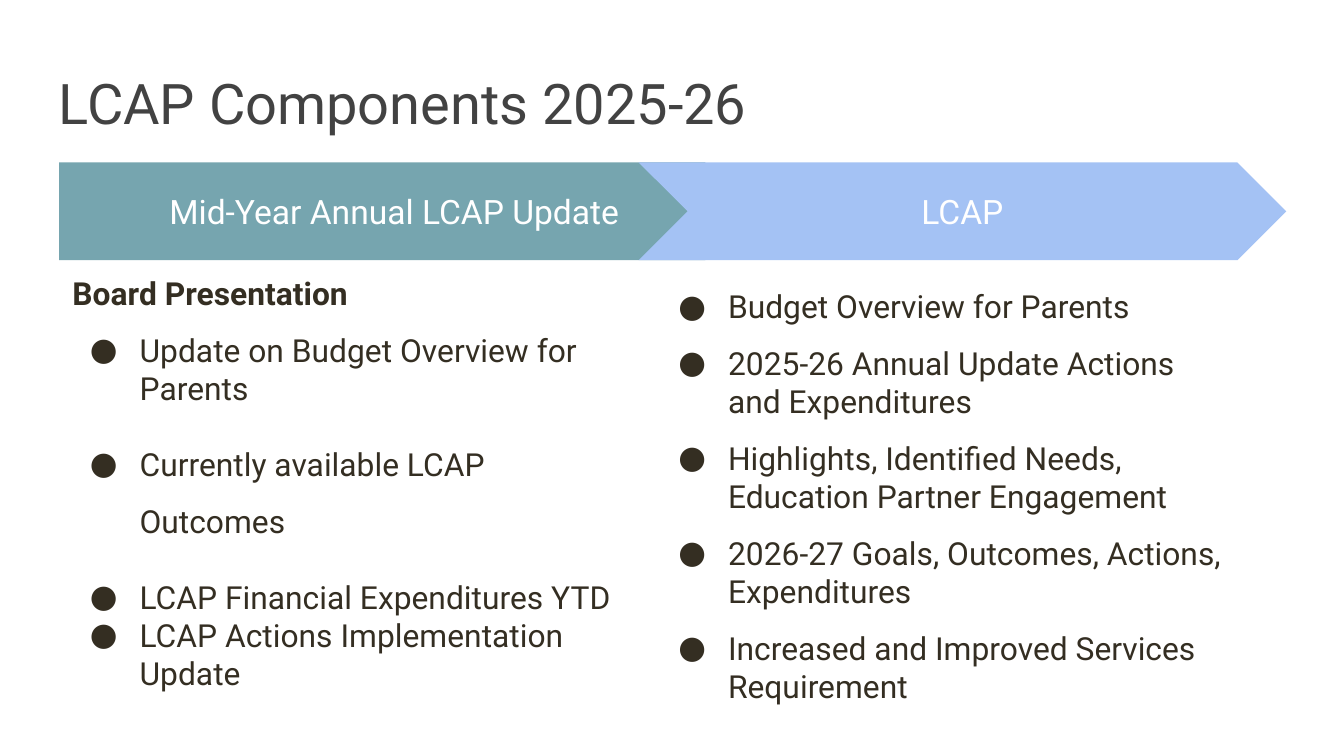
from lxml import etree
from pptx import Presentation
from pptx import util as u
from pptx.dml.color import RGBColor
from pptx.enum import shapes, text
from pptx.oxml import ns

FONT = "Roboto"
INK = "342E22"
WHITE = "FFFFFF"
BODY_SIZE = 17

UPDATE_ITEMS = [
    ("Update on Budget Overview for Parents", 1),
    ("Currently available LCAP Outcomes", 1.5),
    ("LCAP Financial Expenditures YTD", 1.5),
    ("LCAP Actions Implementation Update", None),
]
LCAP_ITEMS = [
    "Budget Overview for Parents",
    "2025-26 Annual Update Actions and Expenditures",
    "Highlights, Identified Needs, Education Partner Engagement",
    "2026-27 Goals, Outcomes, Actions, Expenditures",
    "Increased and Improved Services Requirement",
]


def color(hex_code):
    """Turn a hex string into a colour."""
    return RGBColor.from_string(hex_code)


def prepare_frame(frame, anchor):
    """Set wrapping, insets and vertical anchor of a text frame."""
    frame.word_wrap = True
    frame.vertical_anchor = anchor
    frame.margin_left = frame.margin_right = u.Cm(0.25)
    frame.margin_top = frame.margin_bottom = u.Cm(0.25)


def style(paragraph, size, hex_code, bold=False):
    """Give a paragraph its font."""
    font = paragraph.font
    font.name, font.size, font.bold = FONT, u.Pt(size), bold
    font.color.rgb = color(hex_code)


def add_text_area(slide, box, anchor=text.MSO_ANCHOR.TOP):
    """Add an empty text box and return its frame."""
    frame = slide.shapes.add_textbox(*map(u.Cm, box)).text_frame
    prepare_frame(frame, anchor)
    return frame


def write_bullet(paragraph, wording, spacing=1):
    """Write one bulleted item; no spacing means it sits tight below the last."""
    paragraph.text = wording
    paragraph.space_before = u.Pt(10 if spacing else 0)
    paragraph.line_spacing = spacing or 1.0
    properties = paragraph._p.get_or_add_pPr()
    properties.set("marL", str(u.Cm(1.27)))
    properties.set("indent", str(u.Cm(-0.94)))
    bullet_color = etree.SubElement(properties, ns.qn("a:buClr"))
    etree.SubElement(bullet_color, ns.qn("a:srgbClr"), val=INK)
    etree.SubElement(properties, ns.qn("a:buFont"), typeface=FONT)
    etree.SubElement(properties, ns.qn("a:buChar"), char="●")
    style(paragraph, BODY_SIZE, INK)


def add_title(slide, box, wording):
    """Place the slide title at the bottom of its box."""
    title = add_text_area(slide, box, text.MSO_ANCHOR.BOTTOM).paragraphs[0]
    title.text = wording
    style(title, 30, "424242")


def add_stage(slide, box, preset, wording, fill):
    """Place one labelled arrow of the process band."""
    stage = slide.shapes.add_shape(preset, *map(u.Cm, box))
    stage.shadow.inherit = False
    stage.fill.solid()
    stage.fill.fore_color.rgb = color(fill)
    stage.line.fill.background()
    prepare_frame(stage.text_frame, text.MSO_ANCHOR.MIDDLE)
    label = stage.text_frame.paragraphs[0]
    label.text = wording
    label.alignment = text.PP_ALIGN.CENTER
    style(label, 18, WHITE)


def add_band(slide, box):
    """Place the two overlapping arrows across the band."""
    left, top, width, height = box
    lcap_width = 12.24
    add_stage(slide, (left, top, 13.13, height), shapes.MSO_SHAPE.PENTAGON,
              "Mid-Year Annual LCAP Update", "76A5AF")
    add_stage(slide, (left + width - lcap_width, top, lcap_width, height),
              shapes.MSO_SHAPE.CHEVRON, "LCAP", "A4C2F4")


def add_update_column(slide, box):
    """Place the heading and items of the mid-year update."""
    frame = add_text_area(slide, box)
    heading = frame.paragraphs[0]
    heading.text = "Board Presentation"
    style(heading, BODY_SIZE, INK, bold=True)
    for wording, spacing in UPDATE_ITEMS:
        write_bullet(frame.add_paragraph(), wording, spacing)


def add_lcap_column(slide, box):
    """Place the items of the LCAP."""
    frame = add_text_area(slide, box)
    for index, wording in enumerate(LCAP_ITEMS):
        write_bullet(frame.add_paragraph() if index else frame.paragraphs[0], wording)


def main():
    """Build the slide and save it."""
    deck = Presentation()
    deck.slide_width, deck.slide_height = u.Cm(25.4), u.Cm(14.29)
    slide = deck.slides.add_slide(deck.slide_layouts[6])
    add_title(slide, (0.86, 0.79, 23.67, 2.03), "LCAP Components 2025-26")
    add_update_column(slide, (1.12, 4.93, 11.1, 8.61))
    add_band(slide, (1.12, 3.07, 23.19, 1.85))
    add_lcap_column(slide, (12.24, 5.18, 11.3, 8.48))
    deck.save("out.pptx")


if __name__ == "__main__":
    main()
